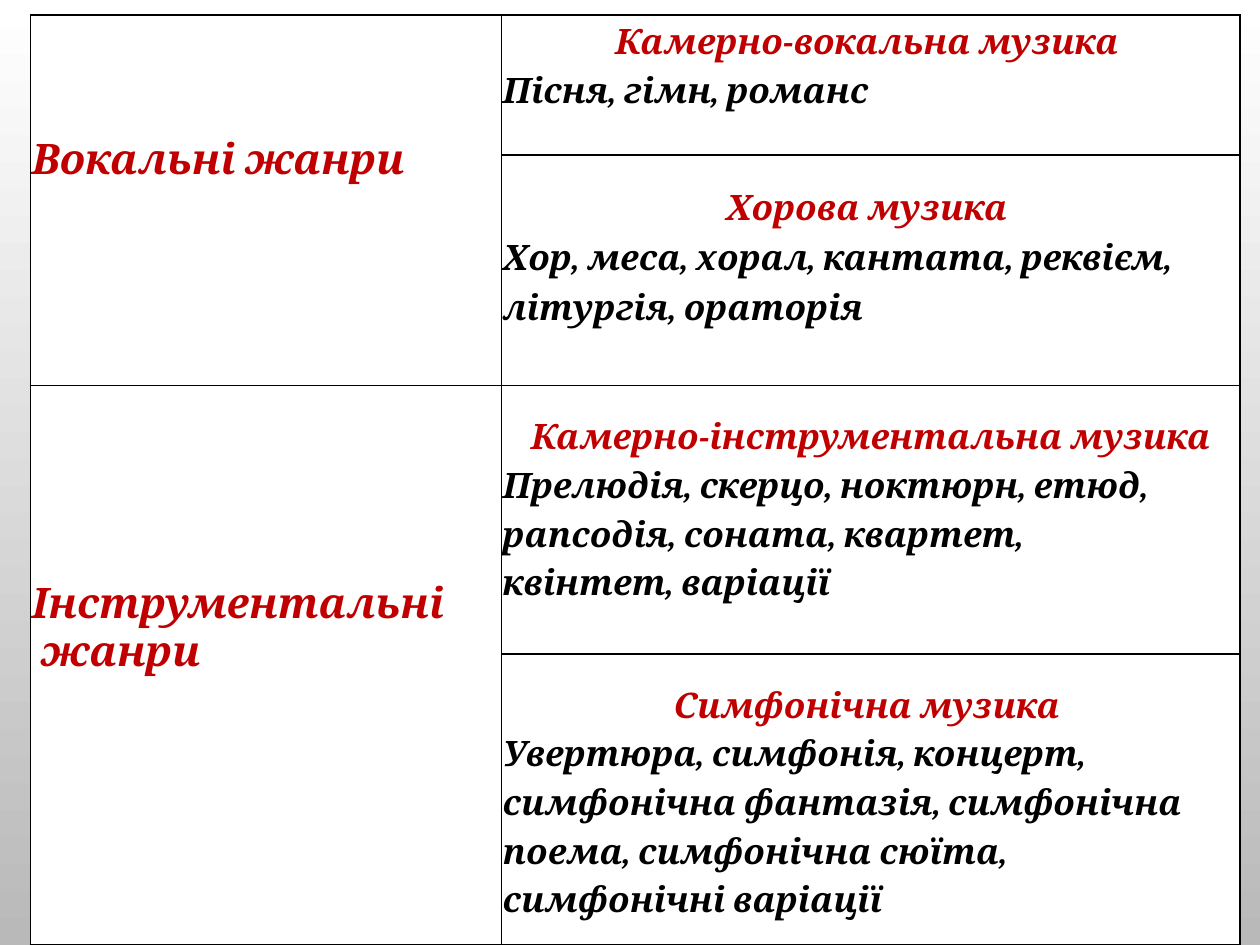
from lxml.etree import SubElement
from pptx import Presentation
from pptx.dml.color import RGBColor
from pptx.enum.text import MSO_ANCHOR, PP_ALIGN
from pptx.oxml.ns import qn
from pptx.util import Inches, Pt

RED = RGBColor(0xC0, 0x00, 0x00)
BLACK = RGBColor(0x00, 0x00, 0x00)
WHITE = RGBColor(0xFF, 0xFF, 0xFF)
GREY = RGBColor(0xB9, 0xB9, 0xB9)

FONT = "Cambria"
GENRE_SIZE, KIND_SIZE = 24, 20
COLUMN_WIDTHS = (3.74, 5.86)
ROW_HEIGHTS = (1.11, 1.83, 2.13, 2.31)
LEFT, TOP = 0.24, 0.12

GENRES = [
    {
        "name": ["Вокальні жанри"],
        "top": 69.5,
        "kinds": [
            ("Камерно-вокальна музика ", ["Пісня, гімн, романс"], 0, 27.8),
            ("Хорова музика ",
             ["Хор, меса, хорал, кантата, реквієм,", "літургія, ораторія"], 14.2, 28.4),
        ],
    },
    {
        "name": ["Інструментальні ", " жанри"],
        "top": 111.2,
        "kinds": [
            ("Камерно-інструментальна музика",
             ["Прелюдія, скерцо, ноктюрн, етюд,", "рапсодія, соната, квартет,",
              "квінтет, варіації"], 13.9, 27.8),
            ("Симфонічна музика ",
             ["Увертюра, симфонія, концерт,", "симфонічна фантазія, симфонічна",
              "поема, симфонічна сюїта,", "симфонічні варіації"], 13.9, 27.8),
        ],
    },
]


def style_cell(cell):
    properties = cell._tc.get_or_add_tcPr()
    for side in ("a:lnL", "a:lnR", "a:lnT", "a:lnB"):
        border = SubElement(properties, qn(side), w=str(Pt(1)))
        border_fill = SubElement(border, qn("a:solidFill"))
        SubElement(border_fill, qn("a:srgbClr"), val=str(BLACK))
    cell.fill.solid()
    cell.fill.fore_color.rgb = WHITE
    cell.margin_left = cell.margin_right = Inches(0.01)
    cell.margin_top = cell.margin_bottom = 0
    cell.vertical_anchor = MSO_ANCHOR.TOP


def write_lines(cell, lines, size, top, pitch):
    cell.margin_top = Pt(top)
    frame = cell.text_frame
    for index, (text, color, alignment) in enumerate(lines):
        paragraph = frame.add_paragraph() if index else frame.paragraphs[0]
        paragraph.alignment = alignment
        paragraph.line_spacing = Pt(pitch)
        run = paragraph.add_run()
        run.text = text
        run.font.name = FONT
        run.font.size = Pt(size)
        run.font.bold = run.font.italic = True
        run.font.color.rgb = color


def main():
    presentation = Presentation()
    presentation.slide_width, presentation.slide_height = Inches(10), Inches(7.5)
    slide = presentation.slides.add_slide(presentation.slide_layouts[6])

    backdrop = slide.background.fill
    backdrop.gradient()
    backdrop.gradient_angle = 270
    for stop, color, position in zip(backdrop.gradient_stops, (WHITE, GREY), (0, 1)):
        stop.color.rgb = color
        stop.position = position

    genre_table = slide.shapes.add_table(
        len(ROW_HEIGHTS), len(COLUMN_WIDTHS), Inches(LEFT), Inches(TOP),
        Inches(sum(COLUMN_WIDTHS)), Inches(sum(ROW_HEIGHTS))).table
    for column, width in zip(genre_table.columns, COLUMN_WIDTHS):
        column.width = Inches(width)
    for row, height in zip(genre_table.rows, ROW_HEIGHTS):
        row.height = Inches(height)
    for cell in genre_table.iter_cells():
        style_cell(cell)

    first_row = 0
    for genre in GENRES:
        kinds = genre["kinds"]
        genre_cell = genre_table.cell(first_row, 0)
        genre_cell.merge(genre_table.cell(first_row + len(kinds) - 1, 0))
        name_lines = [(text, RED, PP_ALIGN.JUSTIFY) for text in genre["name"]]
        write_lines(genre_cell, name_lines, GENRE_SIZE, genre["top"], 27.8)
        for offset, (heading, examples, top, pitch) in enumerate(kinds):
            lines = [(heading, RED, PP_ALIGN.CENTER)]
            lines += [(text, BLACK, PP_ALIGN.LEFT) for text in examples]
            write_lines(genre_table.cell(first_row + offset, 1), lines, KIND_SIZE, top, pitch)
        first_row += len(kinds)

    presentation.save("out.pptx")


if __name__ == "__main__":
    main()
